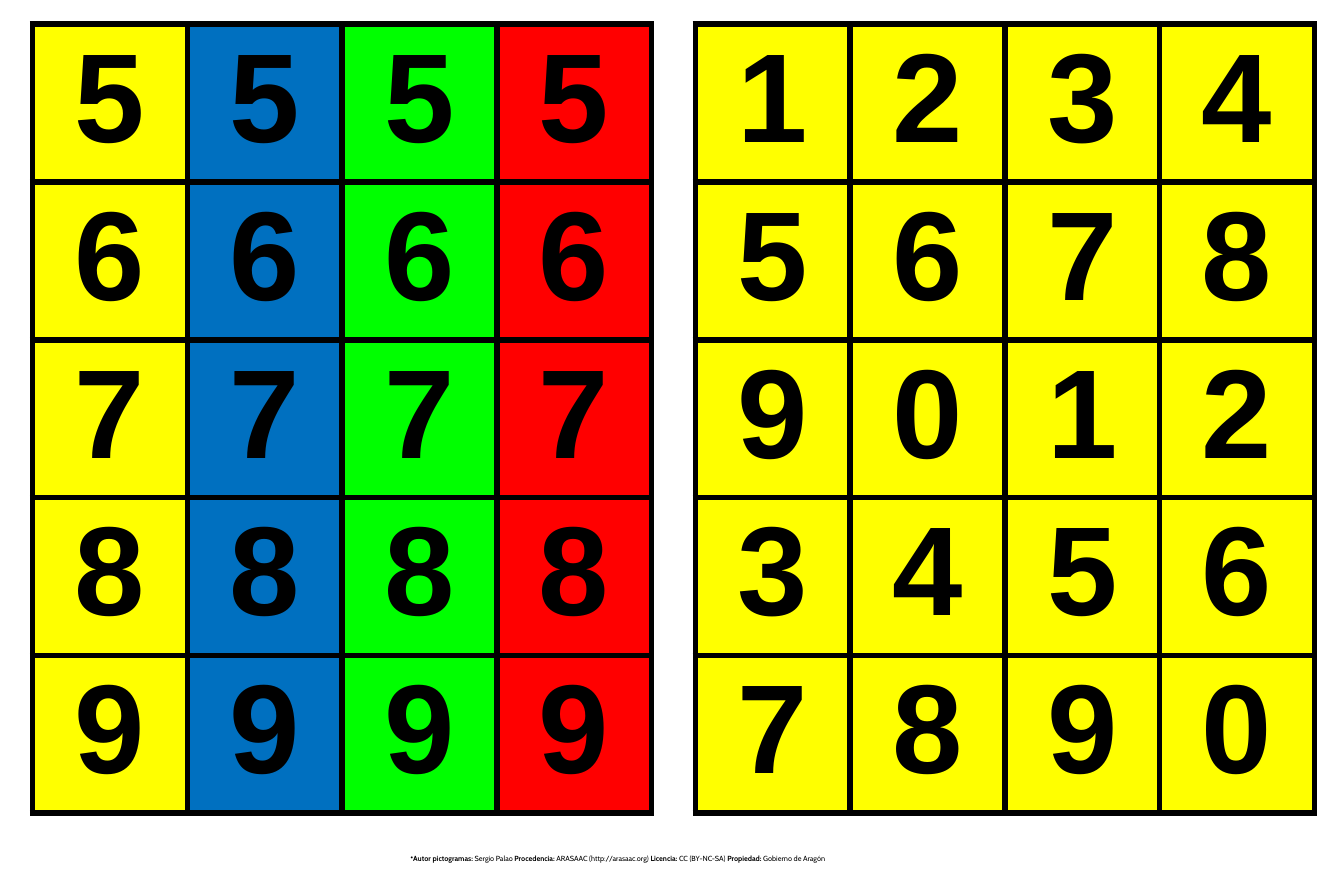
from lxml.etree import SubElement as Sub
from pptx import Presentation
from pptx.dml.color import RGBColor as RGB
from pptx.enum.text import MSO_AUTO_SIZE as Fit, PP_ALIGN as Align
from pptx.oxml.ns import qn
from pptx.util import Inches, Pt

WIDTH, HEIGHT = 17.72, 11.81
COLS, ROWS = 4, 5
CELL_W, CELL_H = 2.04, 2.08
TOP = 0.32
LEFTS = (0.43, 9.17)
HUES = {
    "ink": "000000",
    "yellow": "FFFF00",
    "blue": "0070C0",
    "green": "00FF00",
    "red": "FF0000",
}
CREDIT = (
    ("Autor pictogramas:", " Sergio Palao "),
    ("Procedencia:", " ARASAAC (http://arasaac.org) "),
    ("Licencia:", " CC (BY-NC-SA) "),
    ("Propiedad:", " Gobierno de Aragón"),
)


def hue(name):
    return RGB.from_string(HUES[name])


def add_run(para, text, face, size, bold):
    run = para.add_run()
    run.text = text
    font = run.font
    font.name, font.size, font.bold = face, Pt(size), bold
    font.color.rgb = hue("ink")


def add_edges(cell, width):
    """Draw a solid line on all four sides; call before filling the cell."""
    props = cell._tc.get_or_add_tcPr()
    for side in "LRTB":
        line = Sub(props, qn(f"a:ln{side}"), w=str(Pt(width)))
        fill = Sub(line, qn("a:solidFill"))
        Sub(fill, qn("a:srgbClr"), val=HUES["ink"])


def fill_cell(cell, digit, color):
    add_edges(cell, 6)
    cell.fill.solid()
    cell.fill.fore_color.rgb = hue(color)
    cell.margin_left = cell.margin_right = Inches(0.18)
    cell.margin_top = cell.margin_bottom = Inches(0.05)
    para = cell.text_frame.paragraphs[0]
    para.alignment = Align.CENTER
    add_run(para, str(digit), "Arial", 120, True)


def add_board(slide, left, digits, colors):
    """Add a grid of digits, row by row, with one colour per column."""
    table = slide.shapes.add_table(
        ROWS, COLS, Inches(left), Inches(TOP),
        Inches(COLS * CELL_W), Inches(ROWS * CELL_H)).table
    table.first_row = table.horz_banding = False
    for col in table.columns:
        col.width = Inches(CELL_W)
    for row in table.rows:
        row.height = Inches(CELL_H)
    for i, digit in enumerate(digits):
        row, col = divmod(i, COLS)
        fill_cell(table.cell(row, col), digit, colors[col])


def add_credit(slide):
    box = slide.shapes.add_textbox(
        Inches(0.3 * WIDTH), Inches(0.949 * HEIGHT), Inches(6.81), Inches(0.22))
    frame = box.text_frame
    frame.word_wrap = True
    frame.auto_size = Fit.SHAPE_TO_FIT_TEXT
    para = frame.paragraphs[0]
    Sub(para._p.get_or_add_pPr(), qn("a:buChar"), char="•")
    for label, value in CREDIT:
        add_run(para, label, "Cabin", 7, True)
        add_run(para, value, "Cabin", 7, False)


def main():
    deck = Presentation()
    deck.slide_width, deck.slide_height = Inches(WIDTH), Inches(HEIGHT)
    slide = deck.slides.add_slide(deck.slide_layouts[6])
    cells = range(ROWS * COLS)
    add_board(slide, LEFTS[0], [5 + i // COLS for i in cells],
              ("yellow", "blue", "green", "red"))
    add_board(slide, LEFTS[1], [(i + 1) % 10 for i in cells],
              ("yellow",) * COLS)
    add_credit(slide)
    deck.save("out.pptx")


if __name__ == "__main__":
    main()
